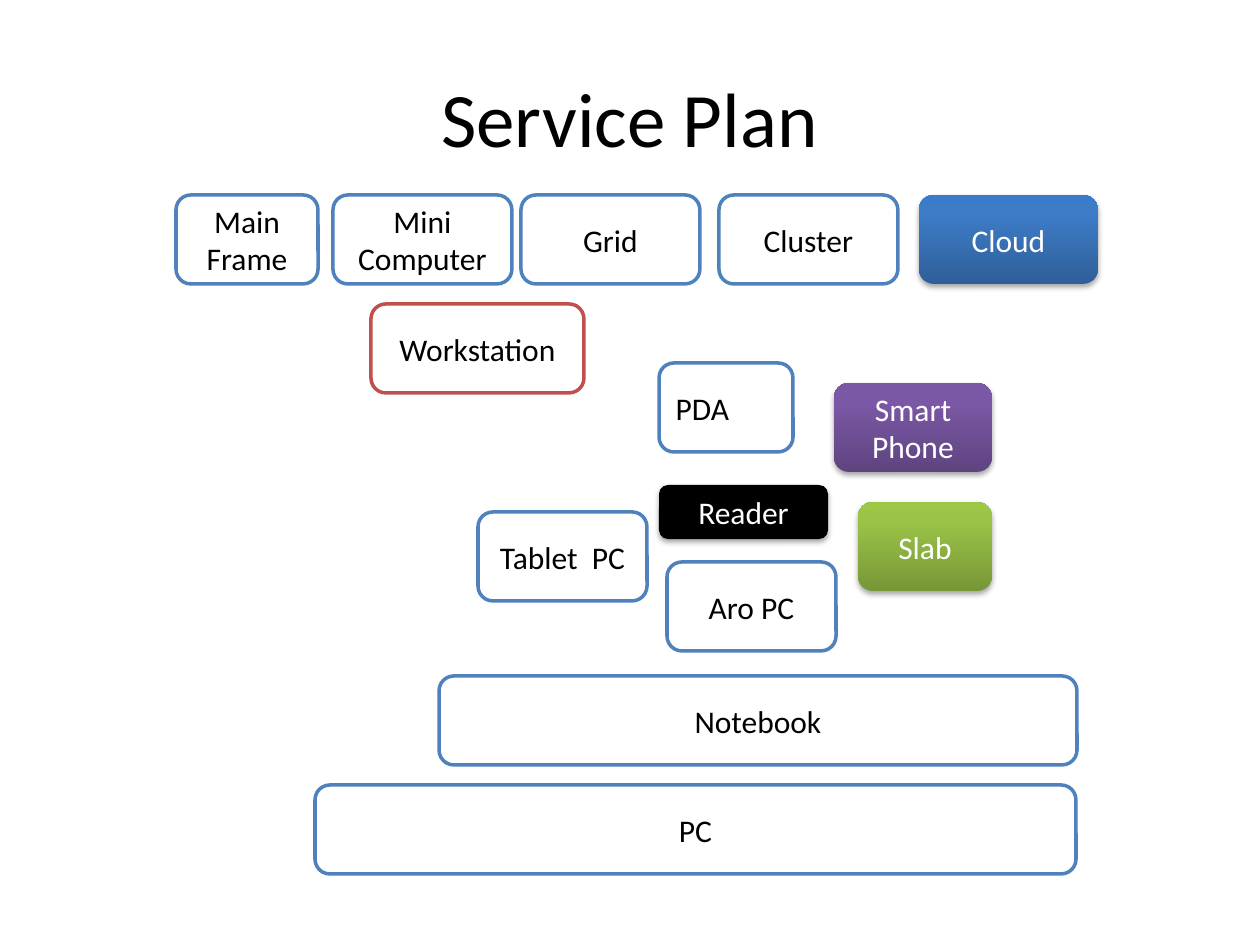
"""Build the Service Plan slide, a map of computer types."""
import copy

import lxml.etree
import pptx
import pptx.dml.color
import pptx.enum.shapes
import pptx.enum.text
import pptx.oxml.ns
import pptx.util

PX = 914400 / 126
THEME = {
    "font": "Calibri", "title": 44, "body": 18, "edge": 2,
    "white": "FFFFFF", "black": "000000", "blue": "4F81BD", "red": "C0504D",
    "cloud": ("2F5F99", "3D7CC7", "3A7CCB"),
    "phone": ("5F4480", "7B58A6", "7C57A8"),
    "slate": ("779737", "9BC348", "9DC746"),
}
ALIGN = pptx.enum.text.PP_ALIGN
ANCHOR = pptx.enum.text.MSO_ANCHOR
ROUND = pptx.enum.shapes.MSO_SHAPE.ROUNDED_RECTANGLE
RGB = pptx.dml.color.RGBColor.from_string
qn = pptx.oxml.ns.qn


def emu(*sizes):
    return [round(size * PX) for size in sizes]


def write(shape, text, size, color, align=ALIGN.CENTER):
    frame = shape.text_frame
    frame.word_wrap = True
    frame.vertical_anchor = ANCHOR.MIDDLE
    for row, line in enumerate(text.split("\n")):
        para = frame.add_paragraph() if row else frame.paragraphs[0]
        para.alignment = align
        run = para.add_run()
        run.text = line
        run.font.name = THEME["font"]
        run.font.size = pptx.util.Pt(size)
        run.font.color.rgb = RGB(color)


deck = pptx.Presentation()
deck.slide_width, deck.slide_height = emu(1260, 945)
slide = deck.slides.add_slide(deck.slide_layouts[6])

TALL, WIDE, TOP = 89, 179, 195
boxes = [
    ("Mini Computer", 333, TOP, WIDE, TALL, "blue"),
    ("PDA", 659, 363, 134, TALL, "blue"),
    ("Main Frame", 176, TOP, 142, TALL, "blue"),
    ("Workstation", 371, 304, 213, TALL, "red"),
    ("PC", 315, 785, 761, TALL, "blue"),
    ("Smart\nPhone", 834, 383, 158, TALL, "phone"),
    ("Notebook", 439, 676, 638, TALL, "blue"),
    ("Tablet  PC", 478, 512, 169, TALL, "blue"),
    ("Aro PC", 667, 562, 169, TALL, "blue"),
    ("Slab", 858, 502, 134, TALL, "slate"),
    ("Grid", 521, TOP, WIDE, TALL, "blue"),
    ("Cluster", 719, TOP, WIDE, TALL, "blue"),
    ("Cloud", 919, TOP, WIDE, TALL, "cloud"),
    ("Reader", 659, 485, 169, 54, "black"),
]

for name, left, top, width, height, look in boxes:
    box = slide.shapes.add_shape(ROUND, *emu(left, top, width, height))
    box.shadow.inherit = False
    tone = THEME[look]
    plain = look in ("blue", "red")
    if plain:
        box.fill.solid()
        box.fill.fore_color.rgb = RGB(THEME["white"])
        box.line.color.rgb = RGB(tone)
        box.line.width = pptx.util.Pt(THEME["edge"])
    else:
        box.line.fill.background()
        if look == "black":
            box.fill.solid()
            box.fill.fore_color.rgb = RGB(tone)
        else:
            box.fill.gradient()
            box.fill.gradient_angle = 90
            stops = box._element.spPr.find(".//" + qn("a:gsLst"))
            stops.insert(1, copy.deepcopy(stops[0]))
            for stop, spot, color in zip(box.fill.gradient_stops, (0, 0.8, 1), tone):
                stop.position = spot
                stop.color.rgb = RGB(color)
        glow = lxml.etree.SubElement(
            box._element.spPr.find(qn("a:effectLst")), qn("a:outerShdw"),
            blurRad="40000", dist="23000", dir="5400000", rotWithShape="0")
        shade = lxml.etree.SubElement(glow, qn("a:srgbClr"), val=THEME["black"])
        lxml.etree.SubElement(shade, qn("a:alpha"), val="35000")
    ink = THEME["black" if plain else "white"]
    write(box, name, THEME["body"], ink, ALIGN.LEFT if name == "PDA" else ALIGN.CENTER)

title = slide.shapes.add_textbox(*emu(63, 38, 1134, 157))
write(title, "Service Plan", THEME["title"], THEME["black"])

deck.save("out.pptx")
